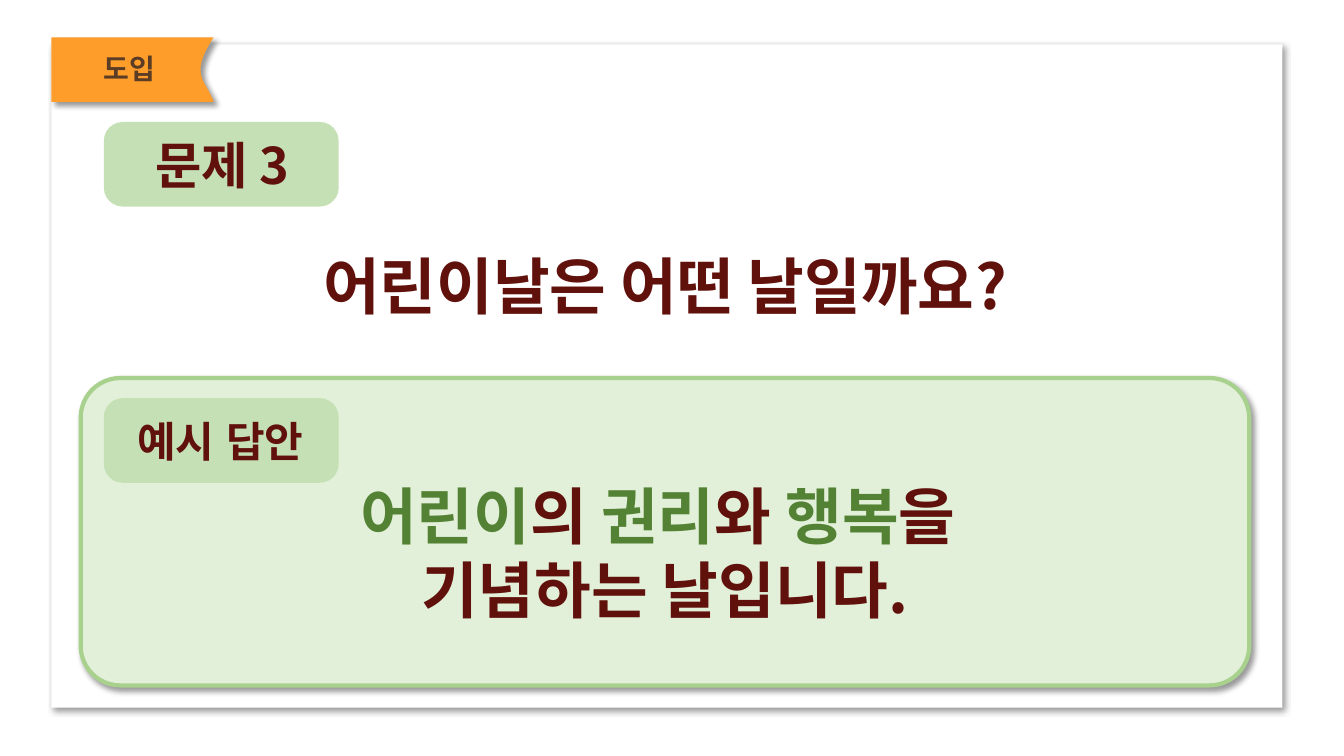
from lxml.etree import SubElement
from pptx import Presentation
from pptx.dml.color import RGBColor
from pptx.enum.shapes import MSO_SHAPE as Preset
from pptx.enum.text import PP_ALIGN as Align
from pptx.oxml.ns import qn
from pptx.util import Inches, Pt

COLORS = {
    "white": "FFFFFF", "black": "000000", "orange": "FE9D2A", "brown": "5B3D25",
    "maroon": "60110B", "label": "C5E0B4", "panel": "E2F0D9", "border": "A9D18E",
    "green": "548235",
}
KOREAN = "Noto Sans CJK KR"
LABEL_SIZE = (2.33, 0.84)


def rgb(name):
    """Return the named colour."""
    return RGBColor.from_string(COLORS[name])


def style_shape(shape, fill, line=None, shadow_distance=None):
    """Set the fill, outline and optional drop shadow of a shape."""
    shape.fill.solid()
    shape.fill.fore_color.rgb = rgb(fill)
    if line:
        shape.line.color.rgb = rgb(line)
        shape.line.width = Pt(3)
    else:
        shape.line.fill.background()
    shape.shadow.inherit = False
    if shadow_distance:
        effects = shape._element.spPr.find(qn("a:effectLst"))
        shadow = SubElement(
            effects, qn("a:outerShdw"), blurRad=str(Pt(4)), dist=str(Pt(shadow_distance)),
            dir=str(45 * 60000), algn="tl", rotWithShape="0")
        color = SubElement(shadow, qn("a:srgbClr"), val=COLORS["black"])
        SubElement(color, qn("a:alpha"), val="40000")


def add_box(slide, box, fill, radius=None, **style):
    """Add a rectangle, rounded when a radius is given."""
    preset = Preset.ROUNDED_RECTANGLE if radius else Preset.RECTANGLE
    shape = slide.shapes.add_shape(preset, *map(Inches, box))
    if radius:
        shape.adjustments[0] = radius
    style_shape(shape, fill, **style)


def add_ribbon(slide, left, top, right, bottom):
    """Add the orange ribbon with its curved notch on the right."""
    curve = [(right, top), (right - 0.25, top + 0.38),
             (right - 0.08, top + 0.42), (right, bottom)]
    steps = 24
    edge = []
    for step in range(1, steps + 1):
        t = step / steps
        weights = ((1 - t) ** 3, 3 * t * (1 - t) ** 2, 3 * t * t * (1 - t), t ** 3)
        edge.append(tuple(
            Inches(sum(weight * point[axis] for weight, point in zip(weights, curve)))
            for axis in (0, 1)))
    builder = slide.shapes.build_freeform(Inches(left), Inches(top))
    builder.add_line_segments(
        [(Inches(right), Inches(top)), *edge, (Inches(left), Inches(bottom))], close=True)
    style_shape(builder.convert_to_shape(), "orange", shadow_distance=4)


def add_text(slide, box, lines, size, font_name=KOREAN):
    """Add centred bold lines, each a list of text and colour pairs."""
    frame = slide.shapes.add_textbox(*map(Inches, box)).text_frame
    frame.word_wrap = True
    font_format = {"name": font_name, "size": Pt(size), "bold": True}
    for index, line in enumerate(lines):
        paragraph = frame.add_paragraph() if index else frame.paragraphs[0]
        paragraph.alignment = Align.CENTER
        for text, color in line:
            run = paragraph.add_run()
            run.text = text
            for name, value in font_format.items():
                setattr(run.font, name, value)
            run.font.color.rgb = rgb(color)
            SubElement(run._r.get_or_add_rPr(), qn("a:ea"), typeface=font_name)


def main():
    """Build the quiz slide and save it."""
    presentation = Presentation()
    presentation.slide_width, presentation.slide_height = Inches(13.33), Inches(7.5)
    slide = presentation.slides.add_slide(presentation.slide_layouts[6])

    add_box(slide, (0.51, 0.44, 12.21, 6.58), "white", shadow_distance=3)
    add_ribbon(slide, 0.51, 0.37, 2.12, 1.01)
    add_text(slide, (0.55, 0.46, 1.47, 0.44), [[("도입", "brown")]], 20)

    add_box(slide, (1.03, 1.21, *LABEL_SIZE), "label", 0.225)
    add_text(slide, (1.04, 1.28, 2.33, 0.71), [[("문제 3", "maroon")]], 36)
    add_box(slide, (0.8, 3.75, 11.59, 3.05), "panel", 0.129,
            line="border", shadow_distance=3)
    add_text(slide, (0.22, 2.41, 12.75, 0.84), [[("어린이날은 어떤 날일까요?", "maroon")]], 44)

    add_box(slide, (1.03, 3.95, *LABEL_SIZE), "label", 0.225)
    add_text(slide, (1.02, 4.07, 2.33, 0.61), [[("예시 답안", "maroon")]], 30, "Arial")
    answer = [
        [("어린이", "green"), ("의 ", "maroon"), ("권리", "green"),
         ("와 ", "maroon"), ("행복", "green"), ("을 ", "maroon")],
        [("기념하는 날입니다.", "maroon")],
    ]
    add_text(slide, (0.8, 4.69, 11.59, 1.58), answer, 44)

    presentation.save("out.pptx")


if __name__ == "__main__":
    main()
